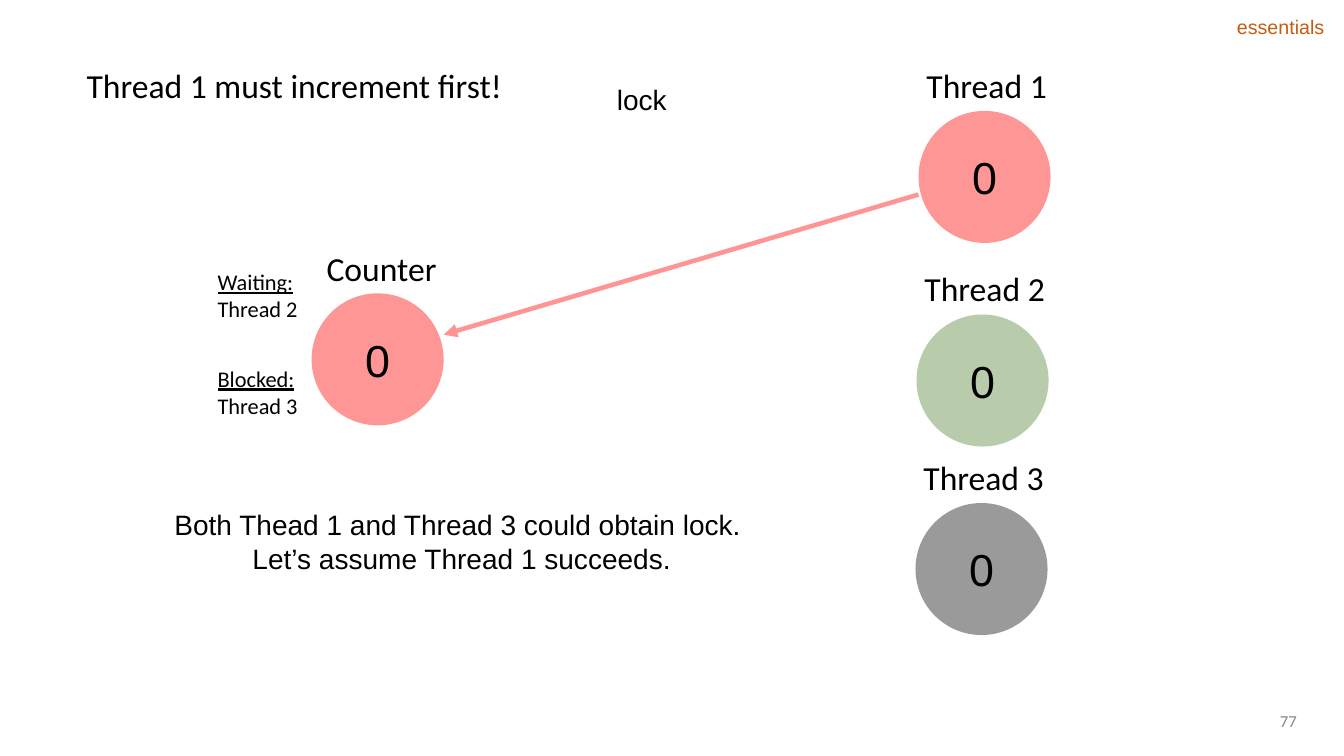
from lxml import etree
from pptx import Presentation
from pptx.dml.color import RGBColor
from pptx.enum import shapes, text
from pptx.oxml import ns
from pptx.util import Inches, Pt

BLACK = RGBColor(0x00, 0x00, 0x00)
RED = RGBColor(0xFF, 0x00, 0x00)
GREEN = RGBColor(0x54, 0x81, 0x35)
CHARCOAL = RGBColor(0x0C, 0x0C, 0x0C)
ORANGE = RGBColor(0xC6, 0x5A, 0x11)
GRAY = RGBColor(0x88, 0x88, 0x88)
LEFT = text.PP_ALIGN.LEFT
CENTER = text.PP_ALIGN.CENTER
RIGHT = text.PP_ALIGN.RIGHT
TOP = text.MSO_ANCHOR.TOP
MIDDLE = text.MSO_ANCHOR.MIDDLE
DIAMETER = 1.31


def write(frame, content, size=24, font="Calibri", color=BLACK, align=LEFT,
          anchor=TOP, wrap=True):
    """Fill a text frame with uniformly formatted text."""
    frame.word_wrap = wrap
    frame.vertical_anchor = anchor
    frame.text = content
    for paragraph in frame.paragraphs:
        paragraph.alignment = align
        for run in paragraph.runs:
            run.font.size = Pt(size)
            run.font.name = font
            run.font.color.rgb = color


def add_label(slide, content, left, top, width, height=0.5, **style):
    """Add a text box and return its text frame."""
    box = slide.shapes.add_textbox(*map(Inches, (left, top, width, height)))
    write(box.text_frame, content, **style)
    return box.text_frame


def set_alpha(fill_parent, percent):
    """Make the solid colour under an element partly transparent."""
    color = fill_parent.find(ns.qn("a:solidFill"))[0]
    etree.SubElement(color, ns.qn("a:alpha"), val=str(percent * 1000))


def add_value_circle(slide, value, left, top, color):
    """Add a translucent circle holding a value."""
    circle = slide.shapes.add_shape(
        shapes.MSO_SHAPE.OVAL,
        *map(Inches, (left, top, DIAMETER, DIAMETER)))
    circle.shadow.inherit = False
    circle.fill.solid()
    circle.fill.fore_color.rgb = color
    set_alpha(circle.element.spPr, 41)
    circle.line.fill.background()
    write(circle.text_frame, value, size=32, font="Arial", align=CENTER,
          anchor=MIDDLE)


def add_arrow(slide, start, end, color):
    """Add a translucent arrow between two points."""
    arrow = slide.shapes.add_connector(
        shapes.MSO_CONNECTOR.STRAIGHT, *map(Inches, start + end))
    arrow.line.width = Pt(3.25)
    arrow.line.color.rgb = color
    outline = arrow.line._get_or_add_ln()
    set_alpha(outline, 42)
    etree.SubElement(outline, ns.qn("a:tailEnd"), type="triangle")
    etree.SubElement(arrow.element.spPr, ns.qn("a:effectLst"))


def add_queue(slide, heading, member, top):
    """Add an underlined queue heading above its member."""
    queue = add_label(slide, f"{heading}\n{member}", 2.06, top, 1.01, 0.64,
                      size=16)
    queue.paragraphs[0].runs[0].font.underline = True


def main():
    """Build the slide on threads competing for a lock."""
    deck = Presentation()
    deck.slide_width, deck.slide_height = Inches(13.33), Inches(7.5)
    slide = deck.slides.add_slide(deck.slide_layouts[6])

    add_label(slide, "77", 9.42, 6.95, 3.54, 0.4, size=12, color=GRAY,
              align=RIGHT, anchor=MIDDLE)
    add_label(slide, "essentials", 12.17, 0.1, 1.07, 0.34, size=14,
              font="Arial", color=ORANGE, wrap=False)
    add_label(slide, "Thread 1 must increment first!", 0.76, 0.59, 4.39)
    add_label(slide, "lock", 6.02, 0.77, 0.7, 0.44, size=20, font="Arial")

    add_value_circle(slide, "0", 3.09, 2.91, RED)
    add_label(slide, "Counter", 3.14, 2.41, DIAMETER)
    add_queue(slide, "Waiting:", "Thread 2", 2.61)
    add_queue(slide, "Blocked:", "Thread 3", 3.57)

    threads = [(9.11, 1.1, RED), (9.09, 3.12, GREEN), (9.08, 4.99, CHARCOAL)]
    for number, (left, top, color) in enumerate(threads, 1):
        add_value_circle(slide, "0", left, top, color)
        add_label(slide, f"Thread {number}", left - 0.02, top - 0.51, 1.41)
    add_arrow(slide, (9.11, 1.93), (4.4, 3.32), RED)

    add_label(slide, "Both Thead 1 and Thread 3 could obtain lock. \v"
              "Let’s assume Thread 1 succeeds.", 1.55, 4.99, 6.06, 0.44,
              size=20, font="Arial", align=CENTER)
    deck.save("out.pptx")


if __name__ == "__main__":
    main()
